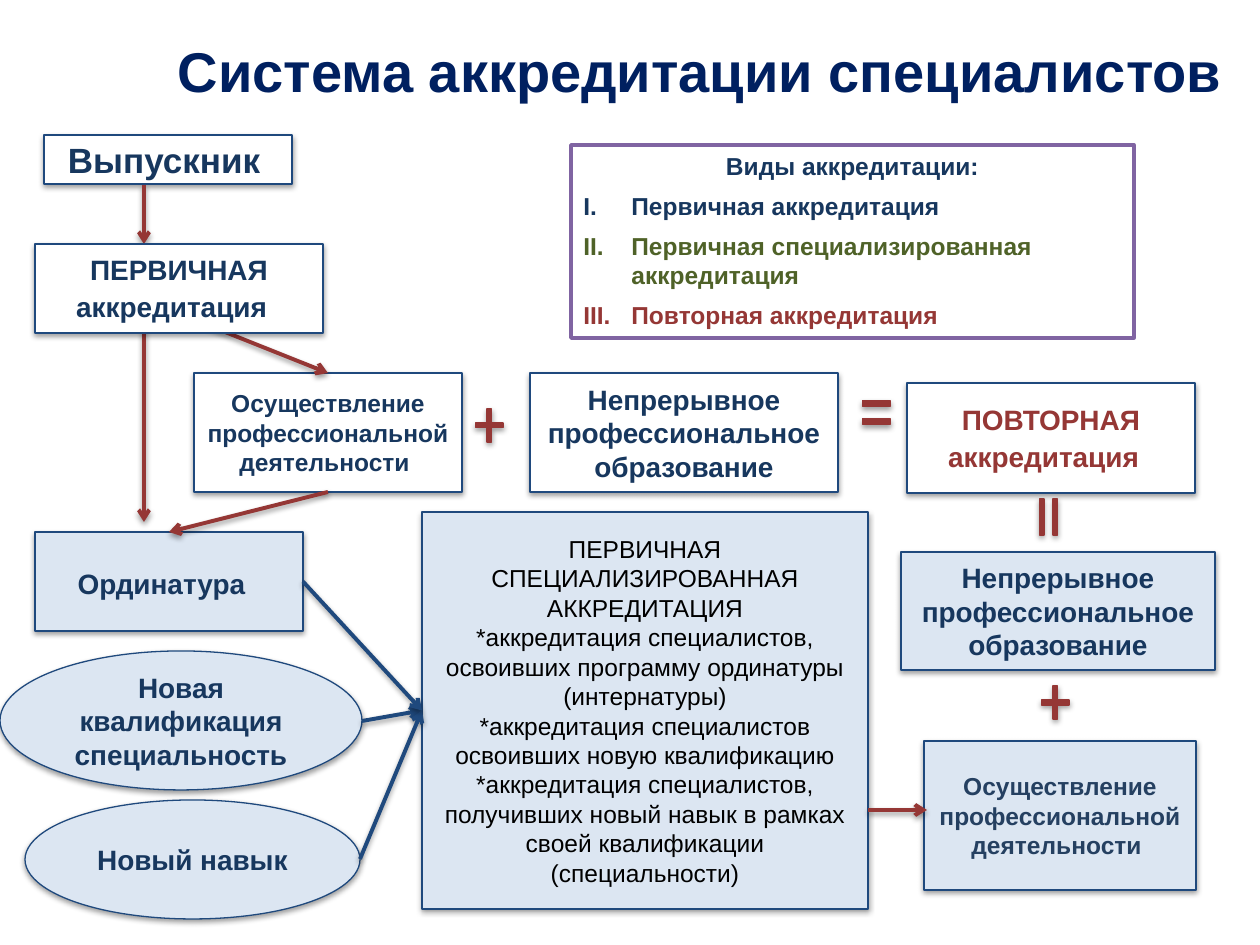
"""Build the slide about the accreditation system for specialists."""
from pptx import Presentation
from pptx.dml.color import RGBColor
from pptx.enum.shapes import MSO_CONNECTOR, MSO_SHAPE
from pptx.enum.text import MSO_ANCHOR, MSO_AUTO_SIZE, PP_ALIGN
from pptx.oxml import parse_xml
from pptx.oxml.ns import nsdecls
from pptx.util import Pt

PX = 7257
STRAIGHT = MSO_CONNECTOR.STRAIGHT
RECT, OVAL = MSO_SHAPE.RECTANGLE, MSO_SHAPE.OVAL
PLUS, EQUAL = MSO_SHAPE.MATH_PLUS, MSO_SHAPE.MATH_EQUAL
TOP, MIDDLE = MSO_ANCHOR.TOP, MSO_ANCHOR.MIDDLE
CENTER, LEFT, RIGHT = PP_ALIGN.CENTER, PP_ALIGN.LEFT, PP_ALIGN.RIGHT
GROW = MSO_AUTO_SIZE.SHAPE_TO_FIT_TEXT
WHITE = RGBColor(0xFF, 0xFF, 0xFF)
BLACK = RGBColor(0x00, 0x00, 0x00)
PALE = RGBColor(0xDC, 0xE6, 0xF2)
BLUE = RGBColor(0x1F, 0x49, 0x7D)
NAVY = RGBColor(0x17, 0x37, 0x5E)
SLATE = RGBColor(0x25, 0x40, 0x61)
TITLE_BLUE = RGBColor(0x00, 0x20, 0x60)
RED = RGBColor(0x95, 0x37, 0x35)
GREEN = RGBColor(0x4F, 0x62, 0x28)
PURPLE = RGBColor(0x80, 0x64, 0xA2)
SHADOW = (
    f'<a:effectLst {nsdecls("a")}><a:outerShdw blurRad="40000" dist="20000" dir="5400000" rotWithShape="0">'
    '<a:srgbClr val="000000"><a:alpha val="38000"/></a:srgbClr></a:outerShdw></a:effectLst>'
)

deck = Presentation()
deck.slide_width, deck.slide_height = 1260 * PX, 945 * PX
page = deck.slides.add_slide(deck.slide_layouts[6])


def add_figure(kind, frame, fill, edge, weight=0.75, shadow=True):
    figure = page.shapes.add_shape(kind, *(value * PX for value in frame))
    figure.fill.solid()
    figure.fill.fore_color.rgb = fill
    figure.line.color.rgb = edge
    figure.line.width = Pt(weight)
    if shadow:
        figure._element.spPr.append(parse_xml(SHADOW))
    else:
        figure.shadow.inherit = False
    return figure


def add_span(para, text, size, color, bold=True, name="Arial"):
    span = para.add_run()
    span.text = text
    for key, value in {"size": Pt(size), "bold": bold, "name": name}.items():
        setattr(span.font, key, value)
    span.font.color.rgb = color


title = page.shapes.add_textbox(54 * PX, 26 * PX, 1181 * PX, 100 * PX).text_frame
for key, value in {"word_wrap": True, "vertical_anchor": MIDDLE}.items():
    setattr(title, key, value)
para = title.paragraphs[0]
for key, value in {"alignment": RIGHT, "line_spacing": 0.8}.items():
    setattr(para, key, value)
add_span(para, "Система аккредитации специалистов", 32, TITLE_BLUE)

PRACTICE = ["Осуществление профессиональной деятельности "]
EDUCATION = ["Непрерывное профессиональное образование"]
SPECIALIZED = [
    "ПЕРВИЧНАЯ СПЕЦИАЛИЗИРОВАННАЯ АККРЕДИТАЦИЯ",
    "*аккредитация специалистов, освоивших программу ординатуры (интернатуры)",
    "*аккредитация специалистов освоивших новую квалификацию",
    "*аккредитация специалистов, получивших новый навык в рамках своей квалификации (специальности)",
]
GAP = (" ", 18, RED, False, "Calibri")
SMALL_GAP = (" ", 16, NAVY, False)
boxes = {
    "practice": (RECT, (194, 373, 268, 119), WHITE, PRACTICE, 14, NAVY, True, None),
    "residency": (RECT, (35, 532, 268, 99), PALE, ["Ординатура "], 16, NAVY, True, GAP),
    "specialized": (RECT, (422, 512, 446, 397), PALE, SPECIALIZED, 14, BLACK, False, None),
    "graduate": (RECT, (44, 135, 248, 49), WHITE, ["Выпускник"], 20, NAVY, True, SMALL_GAP),
    "next practice": (RECT, (924, 741, 272, 149), PALE, PRACTICE, 14, SLATE, True, None),
    "education": (RECT, (530, 373, 308, 119), WHITE, EDUCATION, 16, NAVY, True, None),
    "qualification": (OVAL, (0, 651, 362, 139), PALE,
                      ["Новая квалификация специальность"], 16, NAVY, True, None),
    "skill": (OVAL, (25, 800, 335, 119), PALE, ["Новый навык"], 16, NAVY, True, None),
    "next education": (RECT, (901, 552, 314, 118), PALE, EDUCATION, 16, NAVY, True, None),
    "repeat": (RECT, (907, 383, 288, 110), WHITE, ["ПОВТОРНАЯ аккредитация "], 16, RED, True, GAP),
    "primary": (RECT, (35, 244, 288, 89), WHITE, ["ПЕРВИЧНАЯ аккредитация "], 16, NAVY, True, GAP),
}
figures = {}
for role, (kind, frame, fill, lines, size, color, bold, gap) in boxes.items():
    box = figures[role] = add_figure(kind, frame, fill, BLUE)
    for key, value in {"word_wrap": True, "vertical_anchor": MIDDLE}.items():
        setattr(box.text_frame, key, value)
    for index, line in enumerate(lines):
        para = box.text_frame.add_paragraph() if index else box.text_frame.paragraphs[0]
        para.alignment = CENTER
        add_span(para, line, size, color, bold)
        if gap:
            add_span(para, *gap)

for kind, frame, turn, adjustments in [
    (EQUAL, (858, 383, 37, 59), 0, [0.1, 0.2]),
    (PLUS, (471, 403, 37, 45), 0, [0.13]),
    (PLUS, (1037, 680, 37, 45), 0, [0.13]),
    (EQUAL, (1024, 495, 49, 44), 270, [0.1, 0.2]),
]:
    sign = add_figure(kind, frame, RED, RED)
    sign.rotation = turn
    for index, value in enumerate(adjustments):
        sign.adjustments[index] = value

for ends, color, start, finish in [
    ((144, 185, 144, 244), RED, None, None),
    ((144, 304, 144, 522), RED, None, None),
    ((205, 324, 328, 373), RED, None, ("practice", 0)),
    ((328, 492, 169, 532), RED, ("practice", 2), ("residency", 0)),
    ((362, 721, 422, 711), BLUE, None, ("specialized", 1)),
    ((360, 859, 422, 711), BLUE, None, ("specialized", 1)),
    ((303, 582, 422, 711), BLUE, ("residency", 3), ("specialized", 1)),
    ((868, 810, 927, 810), RED, None, None),
]:
    arrow = page.shapes.add_connector(STRAIGHT, *(value * PX for value in ends))
    if start:
        arrow.begin_connect(figures[start[0]], start[1])
    if finish:
        arrow.end_connect(figures[finish[0]], finish[1])
    arrow.line.color.rgb = color
    arrow.line.width = Pt(2.25)
    arrow.line._get_or_add_ln().append(parse_xml(f'<a:tailEnd {nsdecls("a")} type="arrow"/>'))
    arrow._element.spPr.append(parse_xml(SHADOW))

primary = figures["primary"]._element
primary.getparent().append(primary)

kinds = add_figure(RECT, (571, 145, 563, 193), WHITE, PURPLE, 2, False).text_frame
for key, value in {"word_wrap": True, "vertical_anchor": TOP, "auto_size": GROW}.items():
    setattr(kinds, key, value)
for index, (text, color) in enumerate([
    ("Виды аккредитации:", NAVY),
    ("Первичная аккредитация", NAVY),
    ("Первичная специализированная аккредитация", GREEN),
    ("Повторная аккредитация", RED),
]):
    para = kinds.add_paragraph() if index else kinds.paragraphs[0]
    layout = para._p.get_or_add_pPr()
    layout.set("marL", str(48 * PX))
    layout.set("indent", str(-48 * PX))
    if index:
        layout.append(parse_xml(f'<a:buFont {nsdecls("a")} typeface="+mj-lt"/>'))
        layout.append(parse_xml(f'<a:buAutoNum {nsdecls("a")} type="romanUcPeriod"/>'))
    for key, value in {"alignment": LEFT if index else CENTER, "space_after": Pt(6)}.items():
        setattr(para, key, value)
    add_span(para, text, 14, color)

deck.save("out.pptx")
